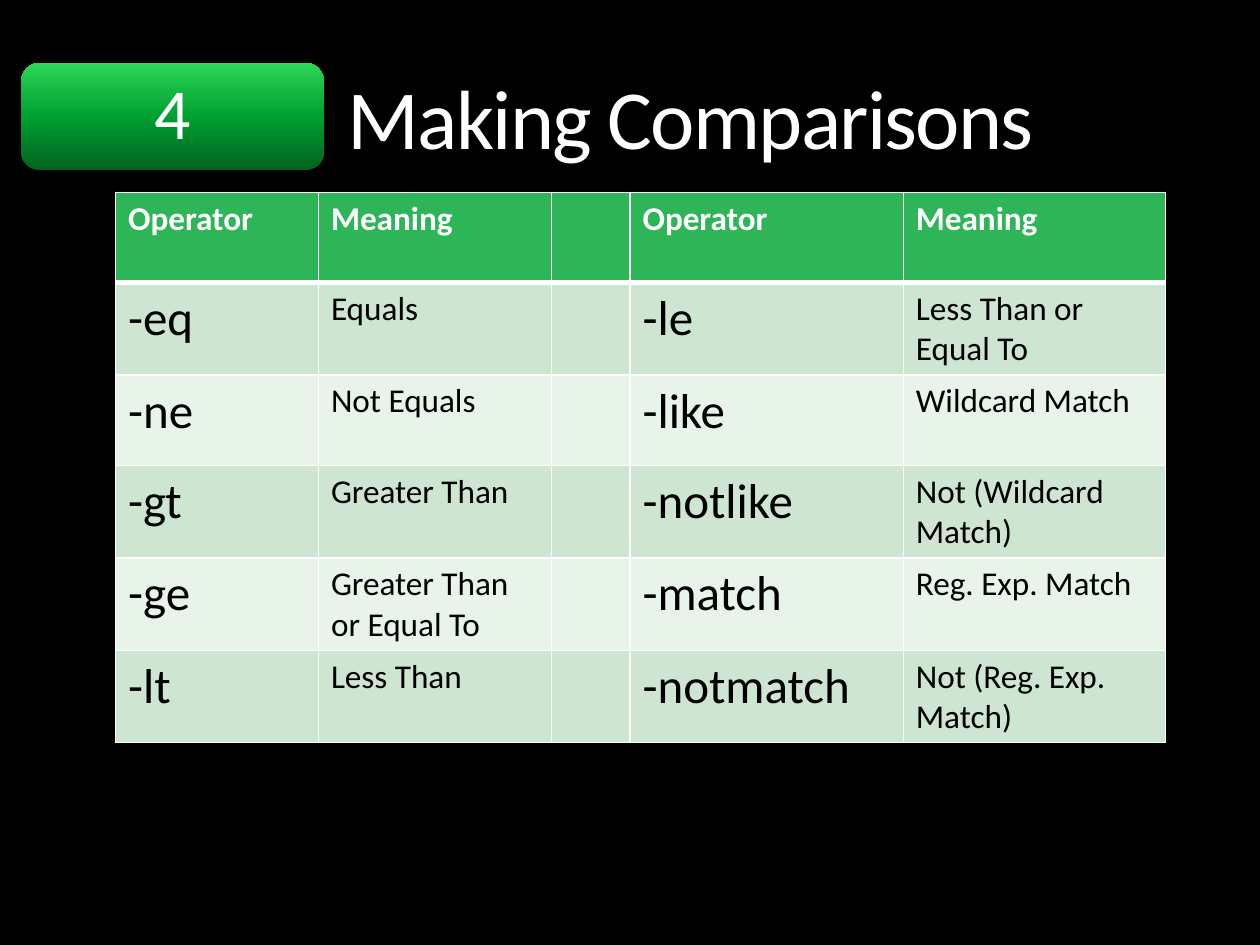
from dataclasses import dataclass

from lxml import etree
from pptx import Presentation
from pptx.dml.color import RGBColor
from pptx.enum.shapes import MSO_SHAPE
from pptx.enum.text import MSO_ANCHOR, MSO_AUTO_SIZE, PP_ALIGN
from pptx.oxml.ns import qn
from pptx.util import Cm, Pt

ROUNDED = MSO_SHAPE.ROUNDED_RECTANGLE
TOP, MIDDLE = MSO_ANCHOR.TOP, MSO_ANCHOR.MIDDLE
LEFT, CENTER = PP_ALIGN.LEFT, PP_ALIGN.CENTER
GROW = MSO_AUTO_SIZE.SHAPE_TO_FIT_TEXT
TITLE_ONLY = 5


@dataclass(frozen=True)
class Theme:
    font: str = "Calibri"
    background: str = "000000"
    light: str = "FFFFFF"
    dark: str = "000000"
    header: str = "2DB557"
    bands: tuple = ("CDE5D1", "E8F3EA")
    badge_stops: tuple = ((0, "00631F"), (50, "00A031"), (70, "10B43F"), (100, "2FD758"))
    title_size: int = 48
    badge_size: int = 41
    operator_size: int = 28
    meaning_size: int = 19
    border: int = 1
    header_border: int = 3


class SlideBuilder:
    def __init__(self, presentation, theme):
        self.theme = theme
        self.slide = presentation.slides.add_slide(presentation.slide_layouts[TITLE_ONLY])
        self.fill(self.slide.background.fill, theme.background)

    def fill(self, fill, color):
        fill.solid()
        fill.fore_color.rgb = RGBColor.from_string(color)

    def add_text(self, paragraph, text, size, color, bold=False):
        run = paragraph.add_run()
        run.text = text
        run.font.name = self.theme.font
        run.font.size = Pt(size)
        run.font.bold = bold
        run.font.color.rgb = RGBColor.from_string(color)
        return run

    def title(self, text, left, top, width, height):
        shape = self.slide.shapes.title
        shape.left, shape.top, shape.width, shape.height = map(Cm, (left, top, width, height))
        frame = shape.text_frame
        frame.margin_left = frame.margin_right = frame.margin_top = frame.margin_bottom = 0
        frame.vertical_anchor = TOP
        frame.word_wrap = True
        frame.auto_size = GROW
        paragraph = frame.paragraphs[0]
        paragraph.alignment = LEFT
        paragraph.line_spacing = 0.9
        run = self.add_text(paragraph, text, self.theme.title_size, self.theme.light)
        # Tighten the letters by one point
        run._r.get_or_add_rPr().set("spc", "-100")

    def badge(self, text, left, top, width, height):
        shape = self.slide.shapes.add_shape(ROUNDED, *map(Cm, (left, top, width, height)))
        shape.shadow.inherit = False
        shape.line.fill.background()
        # Upward gradient with four stops
        shape.fill.gradient()
        shape.fill.gradient_angle = 90
        stops = shape._element.spPr.find(qn("a:gradFill")).find(qn("a:gsLst"))
        for stop in list(stops):
            stops.remove(stop)
        for position, color in self.theme.badge_stops:
            stop = etree.SubElement(stops, qn("a:gs"), pos=str(position * 1000))
            etree.SubElement(stop, qn("a:srgbClr"), val=color)
        frame = shape.text_frame
        frame.vertical_anchor = MIDDLE
        paragraph = frame.paragraphs[0]
        paragraph.alignment = CENTER
        paragraph.line_spacing = 0.9
        self.add_text(paragraph, text, self.theme.badge_size, self.theme.light)

    def borders(self, cell, top, bottom):
        properties = cell._tc.get_or_add_tcPr()
        side = self.theme.border
        for tag, width in (("lnL", side), ("lnR", side), ("lnT", top), ("lnB", bottom)):
            line = etree.SubElement(properties, qn(f"a:{tag}"), w=str(int(Pt(width))))
            solid = etree.SubElement(line, qn("a:solidFill"))
            etree.SubElement(solid, qn("a:srgbClr"), val=self.theme.light)

    def table(self, rows, left, top, column_widths, row_height, operator_columns):
        theme = self.theme
        table = self.slide.shapes.add_table(
            len(rows), len(column_widths), Cm(left), Cm(top),
            Cm(sum(column_widths)), Cm(row_height * len(rows))).table
        for column, width in zip(table.columns, column_widths):
            column.width = Cm(width)
        for row_index, texts in enumerate(rows):
            table.rows[row_index].height = Cm(row_height)
            is_header = row_index == 0
            background = theme.header if is_header else theme.bands[(row_index - 1) % 2]
            for column_index, text in enumerate(texts):
                cell = table.cell(row_index, column_index)
                # The rule under the header belongs to both rows it parts
                self.borders(cell,
                             theme.header_border if row_index == 1 else theme.border,
                             theme.header_border if is_header else theme.border)
                self.fill(cell.fill, background)
                if text:
                    is_operator = column_index in operator_columns and not is_header
                    self.add_text(cell.text_frame.paragraphs[0], text,
                                  theme.operator_size if is_operator else theme.meaning_size,
                                  theme.light if is_header else theme.dark, is_header)


def main():
    presentation = Presentation()
    presentation.slide_width, presentation.slide_height = Cm(25.4), Cm(19.05)
    builder = SlideBuilder(presentation, Theme())

    # Heading with its section number
    builder.title("Making Comparisons", 7.01, 1.55, 23.27, 1.85)
    builder.badge("4", 0.43, 1.27, 6.1, 2.16)

    # Two operator lists side by side, parted by an empty column
    rows = [
        ("Operator", "Meaning", "", "Operator", "Meaning"),
        ("-eq", "Equals", "", "-le", "Less Than or Equal To"),
        ("-ne", "Not Equals", "", "-like", "Wildcard Match"),
        ("-gt", "Greater Than", "", "-notlike", "Not (Wildcard Match)"),
        ("-ge", "Greater Than or Equal To", "", "-match", "Reg. Exp. Match"),
        ("-lt", "Less Than", "", "-notmatch", "Not (Reg. Exp. Match)"),
    ]
    builder.table(rows, 2.33, 3.88, (4.09, 4.7, 1.58, 5.51, 5.28), 1.82, (0, 3))

    presentation.save("out.pptx")


if __name__ == "__main__":
    main()
